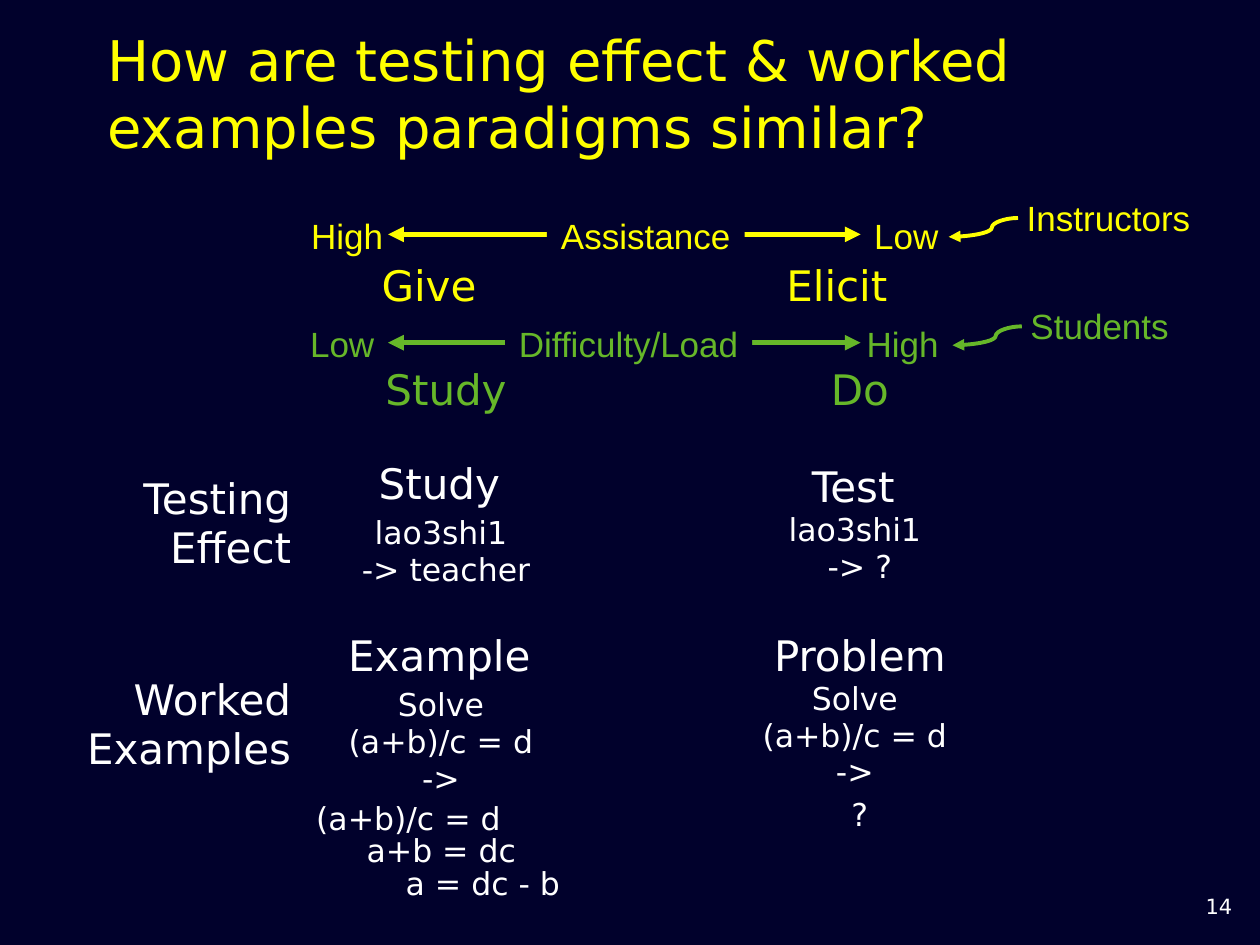
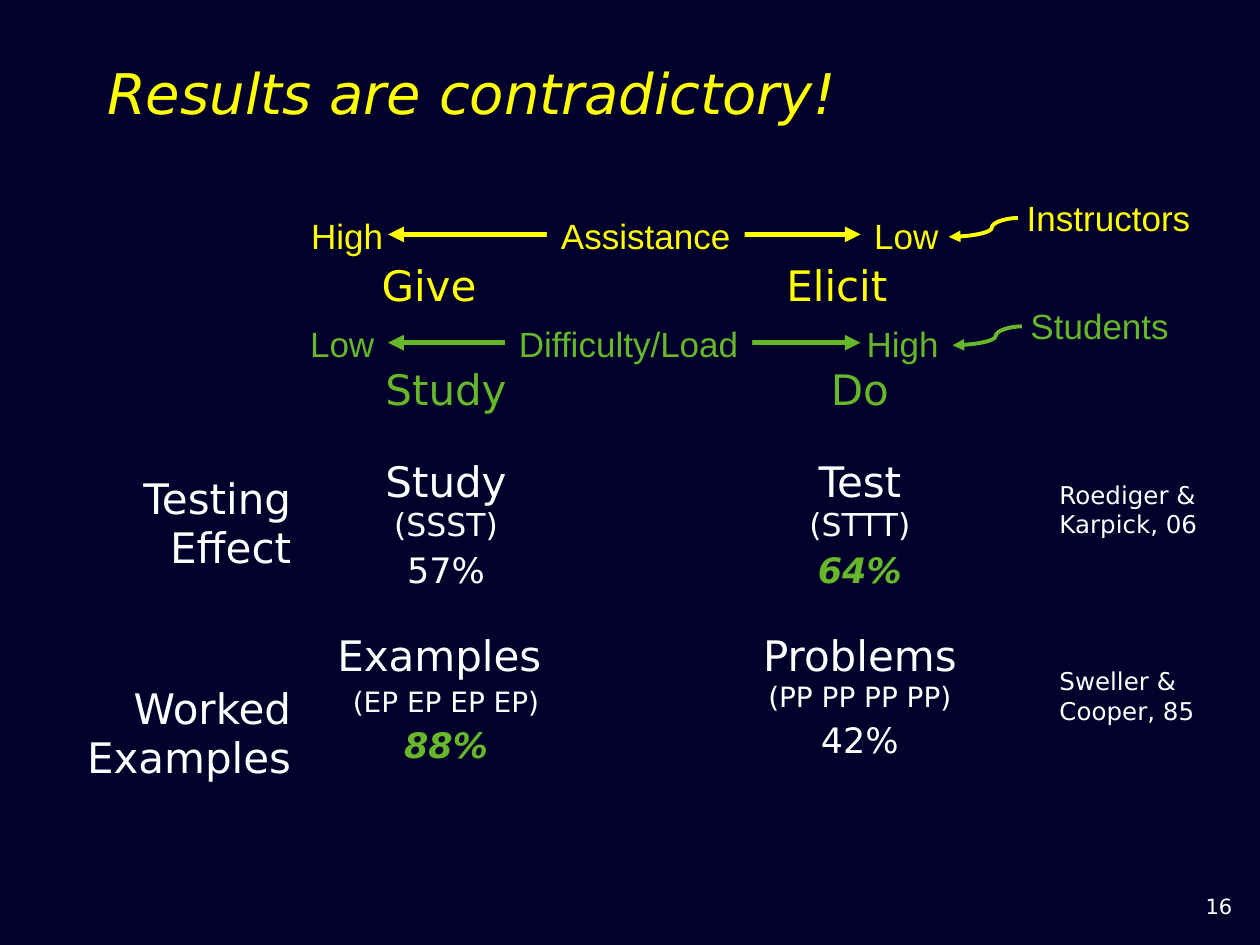
from lxml.etree import SubElement
from pptx import Presentation
from pptx.dml.color import RGBColor
from pptx.enum.shapes import MSO_CONNECTOR, MSO_SHAPE
from pptx.enum.text import MSO_ANCHOR, MSO_AUTO_SIZE, PP_ALIGN
from pptx.oxml.ns import qn
from pptx.util import Pt

NAVY = RGBColor(0x01, 0x01, 0x2C)
YELLOW = RGBColor(0xFF, 0xFF, 0x00)
GREEN = RGBColor(0x66, 0xB7, 0x29)
WHITE = RGBColor(0xFF, 0xFF, 0xFF)
SANS, ARIAL = "DejaVu Sans", "Arial"
NO_GRID = "{2D5ABB26-0587-4C30-8999-92F81FD0307C}"
EMU_PER_PX = 9144

AXIS_X = 234
TABLE_X = 44
GIVE_COLS = [165, 235, 104, 215]
PARADIGM_COLS = [197, 226, 117, 197]
BEST = {"color": GREEN, "bold": True, "italic": True}
MIDDLE = {"vertical_anchor": MSO_ANCHOR.MIDDLE}


def px(*values):
    return [v * EMU_PER_PX for v in values]


def apply(obj, fmt):
    for name, value in fmt.items():
        setattr(obj, name, value)


def run(text, size=24, color=WHITE, **fmt):
    return text, color, {"size": Pt(size), "name": SANS, **fmt}


def para(*runs, **fmt):
    return runs, fmt


def centred(*runs):
    return para(*runs, alignment=PP_ALIGN.CENTER)


def write(tf, paras):
    for i, (runs, fmt) in enumerate(paras):
        p = tf.add_paragraph() if i else tf.paragraphs[0]
        if i:
            p.space_before = Pt(runs[0][2]["size"].pt * 0.2)
        apply(p, fmt)
        for text, color, font in runs:
            for n, line in enumerate(text.split("\n")):
                if n:
                    p.add_line_break()
                if line:
                    r = p.add_run()
                    r.text = line
                    apply(r.font, font)
                    r.font.color.rgb = color


def text_box(s, box, paras, wrap=True):
    tf = s.shapes.add_textbox(*px(*box)).text_frame
    apply(tf, {"word_wrap": wrap, "auto_size": MSO_AUTO_SIZE.SHAPE_TO_FIT_TEXT})
    write(tf, paras)


def arrow(s, kind, ends, color, width, heads):
    c = s.shapes.add_connector(kind, *px(*ends))
    c.line.color.rgb = color
    c.line.width = Pt(width)
    ln = c.line._get_or_add_ln()
    for head in heads:
        SubElement(ln, qn(f"a:{head}"), type="triangle")
    SubElement(c._element.spPr, qn("a:effectLst"))
    return c


def axis(s, x, y, color, audience, measure, low_end, high_end):
    def label(item, dy=0, align=PP_ALIGN.LEFT):
        text, dx, width = item
        text_box(s, (x + dx, y + dy, width, 44),
                 [para(run(text, 20, color, name=ARIAL), alignment=align)], False)

    label(audience, -14)
    aud_x = x + audience[1]
    curve = arrow(s, MSO_CONNECTOR.CURVE, (aud_x + 3, y + 8, aud_x - 52, y + 23),
                  color, 2.25, ["tailEnd"])
    av = curve._element.spPr.find(qn("a:prstGeom")).get_or_add_avLst()
    SubElement(av, qn("a:gd"), name="adj1", fmla="val 37700")
    arrow(s, MSO_CONNECTOR.STRAIGHT, (x + 74, y + 21, x + 449, y + 21),
          color, 3, ["headEnd", "tailEnd"])

    text, dx, width = measure
    sp = s.shapes.add_shape(MSO_SHAPE.RECTANGLE, *px(x + dx, y, width, 44))
    sp.shadow.inherit = False
    sp.fill.solid()
    sp.fill.fore_color.rgb = NAVY
    sp.line.fill.background()
    sp.text_frame.word_wrap = False
    write(sp.text_frame, [centred(run(text, 20, color, name=ARIAL))])
    label(low_end, align=PP_ALIGN.RIGHT)
    label(high_end)


def grid(s, x, y, cols, rows):
    heights = [height for height, _ in rows]
    frame = s.shapes.add_table(len(rows), len(cols),
                               *px(x, y, sum(cols), sum(heights)))
    table = frame.table
    apply(table, {"first_row": False, "horz_banding": False})
    table._tbl.tblPr.find(qn("a:tableStyleId")).text = NO_GRID
    for column, width in zip(table.columns, px(*cols)):
        column.width = width
    for row, (height, cells) in zip(table.rows, rows):
        row.height = height * EMU_PER_PX
        for cell in row.cells:
            cell.fill.background()
        for c, (paras, fmt) in cells.items():
            write(row.cells[c].text_frame, paras)
            apply(row.cells[c], fmt)


def verb_row(left, right, color):
    return 50, {c: ([centred(run(verb, color=color))], {})
                for c, verb in ((1, left), (3, right))}


def paradigm_row(height, name, left, right, name_fmt=MIDDLE, body_fmt=MIDDLE):
    heading = [para(run(name), alignment=PP_ALIGN.RIGHT)]
    return height, {0: (heading, name_fmt), 1: (left, body_fmt), 3: (right, body_fmt)}


def base_slide(prs, title, number, **title_font):
    s = prs.slides.add_slide(prs.slide_layouts[5])
    sp = s.shapes.title
    apply(sp, dict(zip(("left", "top", "width", "height"), px(75, 43, 850, 61))))
    apply(sp.text_frame, {"word_wrap": True, "auto_size": MSO_AUTO_SIZE.NONE, **MIDDLE})
    write(sp.text_frame, [para(run(title, 32, YELLOW, **title_font),
                               alignment=PP_ALIGN.LEFT)])
    text_box(s, (947, 704, 51, 30), [para(run(number, 12))])
    axis(s, AXIS_X, 165, YELLOW, ("Instructors", 571, 151), ("Assistance", 200, 157),
         ("High", 2, 78), ("Low", 450, 73))
    axis(s, AXIS_X, 251, GREEN, ("Students", 574, 131), ("Difficulty/Load", 167, 196),
         ("Low", 0, 73), ("High", 444, 78))
    grid(s, 58, 203, GIVE_COLS, [verb_row("Give", "Elicit ", YELLOW)])
    return s


def similar_slide(prs):
    s = base_slide(prs, "How are testing effect & worked examples paradigms similar?", "14")
    steps = [("(a+b)/c = d", 0), ("a+b = dc", 40), ("a = dc - b", 71)]
    solution = [para(run(text, 18), line_spacing=0.9, space_before=Pt(0 if indent else 3.6))
                for text, indent in steps]
    example = [centred(run("Example ")),
               centred(run("Solve \n(a+b)/c = d \n-> ", 18)), *solution]
    problem = [centred(run("Problem "), run("Solve \n(a+b)/c = d \n-> ", 18)),
               centred(run("?", 18))]
    study = [centred(run("Study ")), centred(run("lao3shi1 \n-> teacher", 18))]
    test = [centred(run("Test \n"), run("lao3shi1 \n-> ?", 18))]
    y = 286
    for row in (verb_row("Study", "Do", GREEN),
                paradigm_row(161, "Testing Effect", study, test),
                paradigm_row(231, "Worked\nExamples", example, problem,
                             {"margin_top": 40 * EMU_PER_PX}, {})):
        grid(s, TABLE_X, y, PARADIGM_COLS, [row])
        y += row[0]
    table = s.shapes[-1].table
    for p, (_, indent) in zip(table.cell(0, 1).text_frame.paragraphs[2:], steps):
        p._p.get_or_add_pPr().set("marL", str(indent * EMU_PER_PX))


def results_slide(prs):
    s = base_slide(prs, "Results are contradictory!", "16", italic=True)
    study = [centred(run("Study\n"), run("(SSST)", 18)), centred(run("57%", 20))]
    test = [centred(run("Test\n"), run("(STTT)", 18)), centred(run("64%", 20, **BEST))]
    examples = [centred(run("Examples ")), centred(run("(EP EP EP EP)", 16)),
                centred(run("88%", 20, **BEST))]
    problems = [centred(run("Problems "), run("(PP PP PP PP)", 16)),
                centred(run("42%", 20))]
    grid(s, TABLE_X, 286, PARADIGM_COLS, [
        verb_row("Study", "Do", GREEN),
        paradigm_row(161, "Testing Effect", study, test),
        paradigm_row(171, "Worked\nExamples", examples, problems, body_fmt={})])
    for y, citation in ((376, "Roediger & Karpick, 06"), (524, "Sweller & Cooper, 85")):
        text_box(s, (831, y, 169, 58), [para(run(citation, 14))])


def main():
    prs = Presentation()
    prs.slide_width, prs.slide_height = px(1000, 750)
    fill = prs.slide_master.background.fill
    fill.solid()
    fill.fore_color.rgb = NAVY
    similar_slide(prs)
    results_slide(prs)
    prs.save("out.pptx")


if __name__ == "__main__":
    main()
